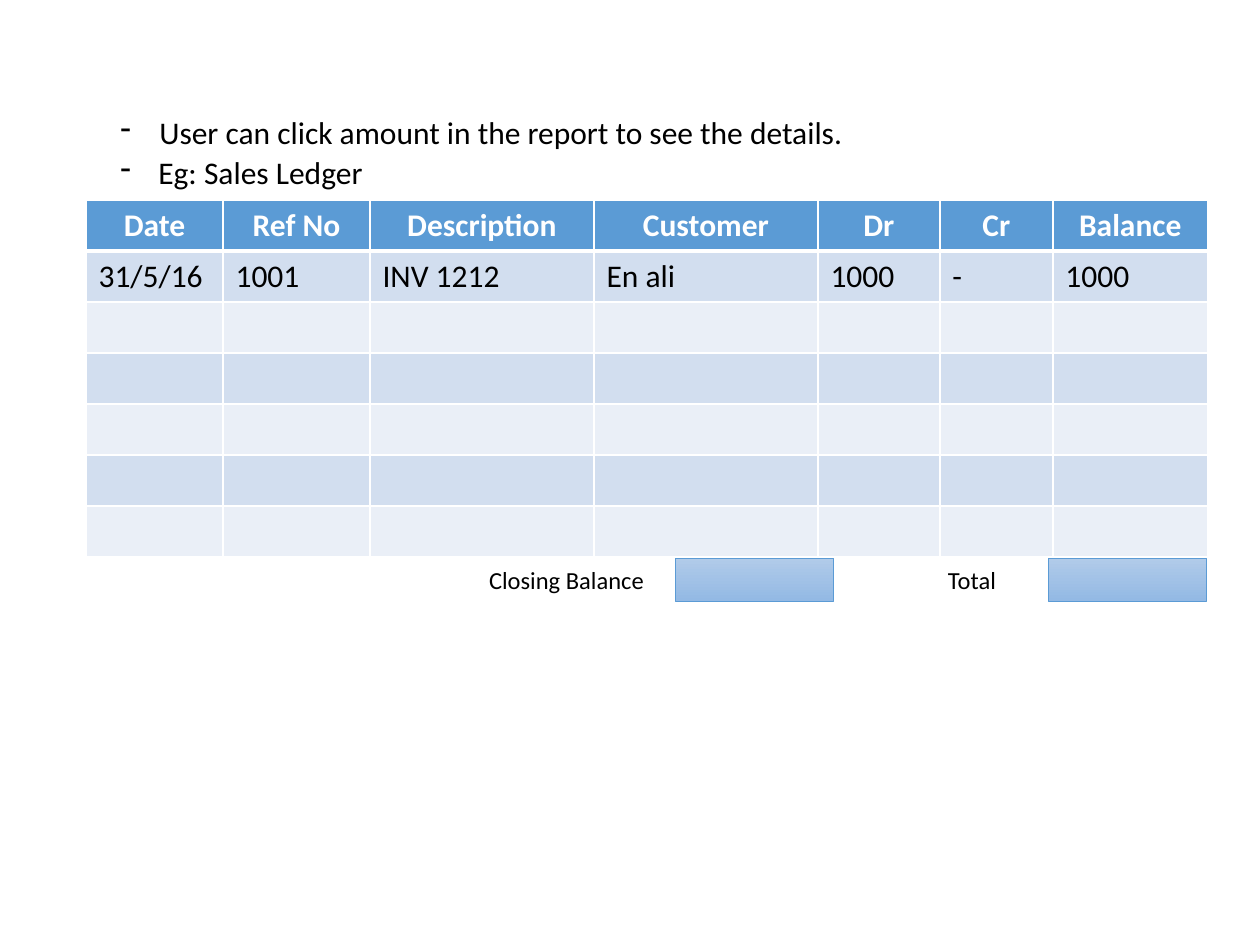
import pptx
import pptx.util
import pptx.dml.color
import pptx.enum.shapes
import pptx.enum.text
import pptx.oxml
import pptx.oxml.ns

PX = 914400 / 126
ALIGN = pptx.enum.text.PP_ALIGN
RECT = pptx.enum.shapes.MSO_SHAPE.RECTANGLE


def px(*values):
    return [round(v * PX) for v in values]


def rgb(value):
    return pptx.dml.color.RGBColor.from_string(value)


prs = pptx.Presentation()
prs.slide_width, prs.slide_height = px(1260, 945)
s = prs.slides.add_slide(prs.slide_layouts[6])
ns = pptx.oxml.ns.nsdecls("a")

# Dashed notes
notes = [
    (107, "User can click amount in the report to see the details.", 39),
    (147, "Eg: Sales Ledger", 38),
]
for top, text, indent in notes:
    tf = s.shapes.add_textbox(*px(108, top, 1061, 50)).text_frame
    tf.word_wrap = True
    p = tf.paragraphs[0]
    pPr = p._p.get_or_add_pPr()
    pPr.set("marL", str(px(indent)[0]))
    pPr.set("indent", str(px(-indent)[0]))
    pPr.append(pptx.oxml.parse_xml(f'<a:buChar {ns} char="-"/>'))
    r = p.add_run()
    r.text = text
    r.font.name, r.font.size = "Calibri", pptx.util.Pt(18)
    r.font.color.rgb = rgb("000000")

# Ledger table
widths = [137, 147, 224, 224, 122, 113, 155]
row_h = 51
rows = [
    ["Date", "Ref No", "Description", "Customer", "Dr", "Cr", "Balance"],
    ["31/5/16", "1001", "INV 1212", "En ali", "1000", "-", "1000"],
] + [[""] * 7] * 5
frame = s.shapes.add_table(len(rows), len(widths), *px(86, 200, sum(widths), row_h * len(rows)))
table = frame.table
for col, width in zip(table.columns, widths):
    col.width = px(width)[0]
for i, row in enumerate(rows):
    table.rows[i].height = px(row_h)[0]
    for j, text in enumerate(row):
        cell = table.cell(i, j)
        cell.fill.solid()
        cell.fill.fore_color.rgb = rgb("5B9BD5" if i == 0 else "D2DEEF" if i % 2 else "EAEFF7")
        # White grid, heavier under the header
        tcPr = cell._tc.get_or_add_tcPr()
        for k, side in enumerate("LRTB"):
            heavy = (i, side) in [(0, "B"), (1, "T")]
            tcPr.insert(k, pptx.oxml.parse_xml(
                f'<a:ln{side} {ns} w="{38100 if heavy else 12700}"><a:solidFill>'
                f'<a:srgbClr val="FFFFFF"/></a:solidFill></a:ln{side}>'))
        if text:
            p = cell.text_frame.paragraphs[0]
            p.alignment = ALIGN.CENTER if i == 0 else ALIGN.LEFT
            r = p.add_run()
            r.text = text
            r.font.name, r.font.size, r.font.bold = "Calibri", pptx.util.Pt(18), i == 0
            r.font.color.rgb = rgb("FFFFFF" if i == 0 else "000000")

# Totals: a label and a box for each
totals = [("Total", 935, 74, 1048), ("Closing Balance", 476, 181, 675)]
for text, left, width, box_left in totals:
    sp = s.shapes.add_shape(RECT, *px(left, 558, width, 43))
    sp.shadow.inherit = False
    sp.fill.solid()
    sp.fill.fore_color.rgb = rgb("FFFFFF")
    sp.line.fill.background()
    tf = sp.text_frame
    tf.word_wrap = False
    p = tf.paragraphs[0]
    p.alignment = ALIGN.CENTER
    r = p.add_run()
    r.text = text
    r.font.name, r.font.size = "Calibri", pptx.util.Pt(14)
    r.font.color.rgb = rgb("000000")

    sp = s.shapes.add_shape(RECT, *px(box_left, 558, 159, 43))
    sp.shadow.inherit = False
    sp.fill.gradient()
    sp.fill.gradient_angle = 270
    for stop, position, color in zip(sp.fill.gradient_stops, (0, 1), ("B1CBE9", "93B9E4")):
        stop.position = position
        stop.color.rgb = rgb(color)
    sp.line.color.rgb = rgb("5B9BD5")
    sp.line.width = pptx.util.Pt(0.5)

prs.save("out.pptx")
